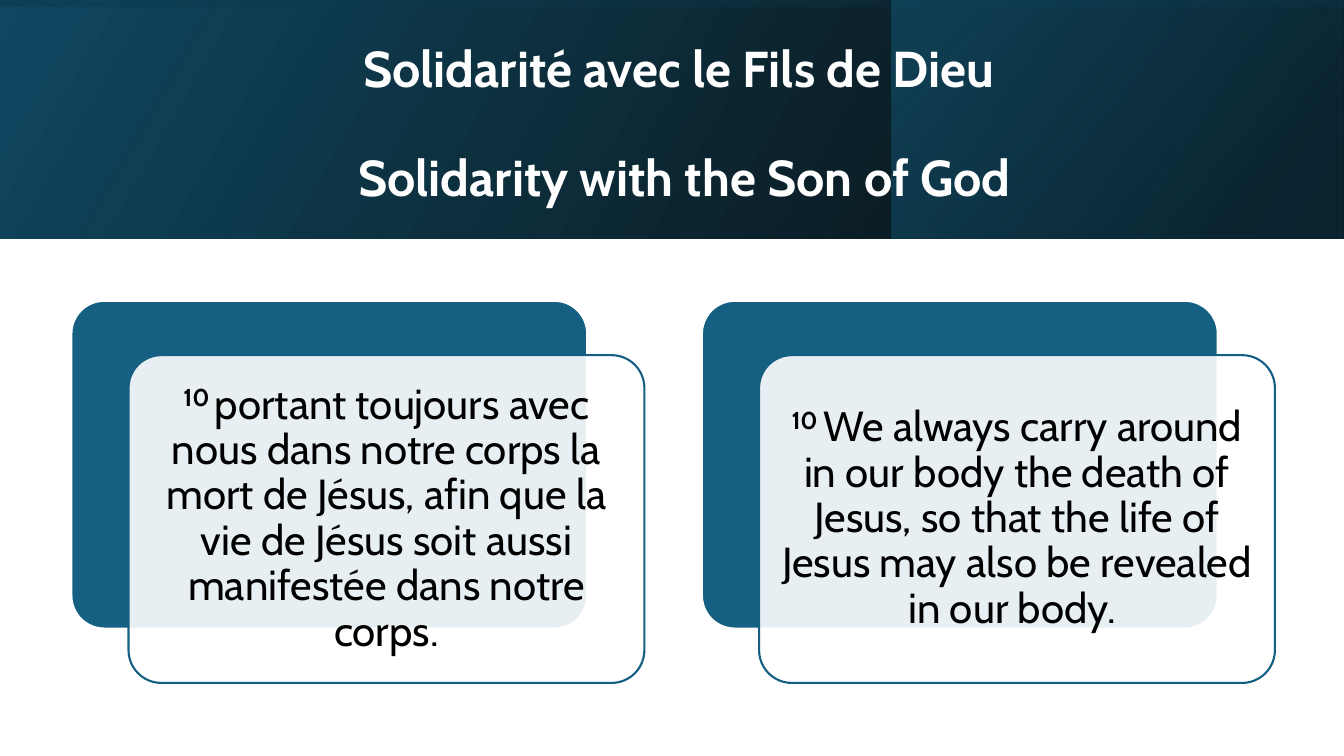
from lxml.etree import SubElement
from pptx import Presentation
from pptx.dml.color import RGBColor
from pptx.enum.shapes import MSO_SHAPE
from pptx.enum.text import MSO_ANCHOR, PP_ALIGN
from pptx.oxml.ns import qn
from pptx.util import Cm, Pt

COLORS = {
    "white": "FFFFFF",
    "black": "000000",
    "blue": "156082",
    "deep_blue": "104862",
    "night_blue": "0B3041",
}
FONT = "Cabin"
SLIDE_WIDTH, SLIDE_HEIGHT = 33.87, 19.05
BAND_HEIGHT = 6.02
TITLE_LINES = ["Solidarité avec le Fils de Dieu ", "Solidarity with the Son of God"]
VERSES = [
    "portant toujours avec nous dans notre corps la mort de Jésus, afin que la "
    "vie de Jésus soit aussi manifestée dans notre corps.",
    "We always carry around in our body the death of Jesus, so that the life of "
    "Jesus may also be revealed in our body. ",
]


def rgb(name):
    return RGBColor.from_string(COLORS[name])


def set_opacity(fill_element, percent):
    """Make the colour inside a solid fill or gradient stop translucent."""
    color = fill_element.find(qn("a:srgbClr"))
    SubElement(color, qn("a:alpha")).set("val", str(percent * 1000))


def add_run(paragraph, text, size, color, bold=False):
    run = paragraph.add_run()
    run.text = text
    run.font.name = FONT
    run.font.size = Pt(size)
    run.font.bold = bold
    run.font.color.rgb = rgb(color)
    return run


def add_gradient_panel(slide, left, top, width, height, stops, angle, rotation=0):
    """Add a mirrored rectangle; stops are (position %, colour, opacity %)."""
    panel = slide.shapes.add_shape(
        MSO_SHAPE.RECTANGLE, Cm(left), Cm(top), Cm(width), Cm(height))
    panel.shadow.inherit = False
    panel.line.fill.background()
    panel.rotation = rotation
    properties = panel._element.spPr
    properties.find(qn("a:xfrm")).set("flipH", "1")
    panel.fill.gradient()
    panel.fill.gradient_angle = angle
    stop_elements = properties.iter(qn("a:gs"))
    for stop, element, (position, color, opacity) in zip(
            panel.fill.gradient_stops, stop_elements, stops):
        stop.position = position / 100
        stop.color.rgb = rgb(color)
        set_opacity(element, opacity)


def add_header(slide, left, top, width, height):
    add_gradient_panel(slide, left, top, width, height,
                       [(0, "black", 96), (100, "deep_blue", 100)], 30)
    side_width = 11.39
    add_gradient_panel(slide, left + width - side_width - 0.02, top, side_width, height,
                       [(19, "night_blue", 68), (100, "blue", 48)], 40)
    # Turned a quarter, so width and height swap around the band's centre
    add_gradient_panel(slide, left + (width - height) / 2, top + (height - width) / 2,
                       height, width,
                       [(23, "deep_blue", 16), (99, "black", 45)], 10, rotation=270)

    title = slide.shapes.add_textbox(
        Cm(left + 3.84), Cm(top + 0.97), Cm(26.82), Cm(4.37))
    frame = title.text_frame
    frame.word_wrap = True
    frame.vertical_anchor = MSO_ANCHOR.MIDDLE
    for index, line in enumerate(TITLE_LINES):
        paragraph = frame.add_paragraph() if index else frame.paragraphs[0]
        paragraph.alignment = PP_ALIGN.CENTER
        paragraph.line_spacing = 0.9
        paragraph.space_before = Pt(39 * index)
        add_run(paragraph, line, 36, "white", bold=True)


def add_card(slide, left, top, width, height, fill, line):
    card = slide.shapes.add_shape(
        MSO_SHAPE.ROUNDED_RECTANGLE, Cm(left), Cm(top), Cm(width), Cm(height))
    card.adjustments[0] = 0.1
    card.shadow.inherit = False
    card.fill.solid()
    card.fill.fore_color.rgb = rgb(fill)
    card.line.color.rgb = rgb(line)
    card.line.width = Pt(1.5)
    return card


def add_verse(slide, left, top, width, height, verse):
    """Add a blue card with a translucent text card shifted over it."""
    add_card(slide, left, top, width, height, "blue", "white")
    front = add_card(slide, left + 1.44, top + 1.37, width, height, "white", "blue")
    set_opacity(front._element.spPr.find(qn("a:solidFill")), 90)

    frame = front.text_frame
    frame.word_wrap = True
    frame.vertical_anchor = MSO_ANCHOR.MIDDLE
    frame.margin_left = frame.margin_right = Cm(0.3)
    frame.margin_top = frame.margin_bottom = Cm(0.3)
    paragraph = frame.paragraphs[0]
    paragraph.alignment = PP_ALIGN.CENTER
    paragraph.line_spacing = 0.9
    number = add_run(paragraph, "10 ", 30, "black", bold=True)
    number.font._element.set("baseline", "30000")
    add_run(paragraph, verse, 30, "black")


def main():
    presentation = Presentation()
    presentation.slide_width = Cm(SLIDE_WIDTH)
    presentation.slide_height = Cm(SLIDE_HEIGHT)
    slide = presentation.slides.add_slide(presentation.slide_layouts[6])
    slide.background.fill.solid()
    slide.background.fill.fore_color.rgb = rgb("white")

    add_header(slide, 0, 0, SLIDE_WIDTH, BAND_HEIGHT)
    for index, verse in enumerate(VERSES):
        add_verse(slide, 1.8 + index * 15.89, 7.58, 13, 8.26, verse)
    presentation.save("out.pptx")


if __name__ == "__main__":
    main()
